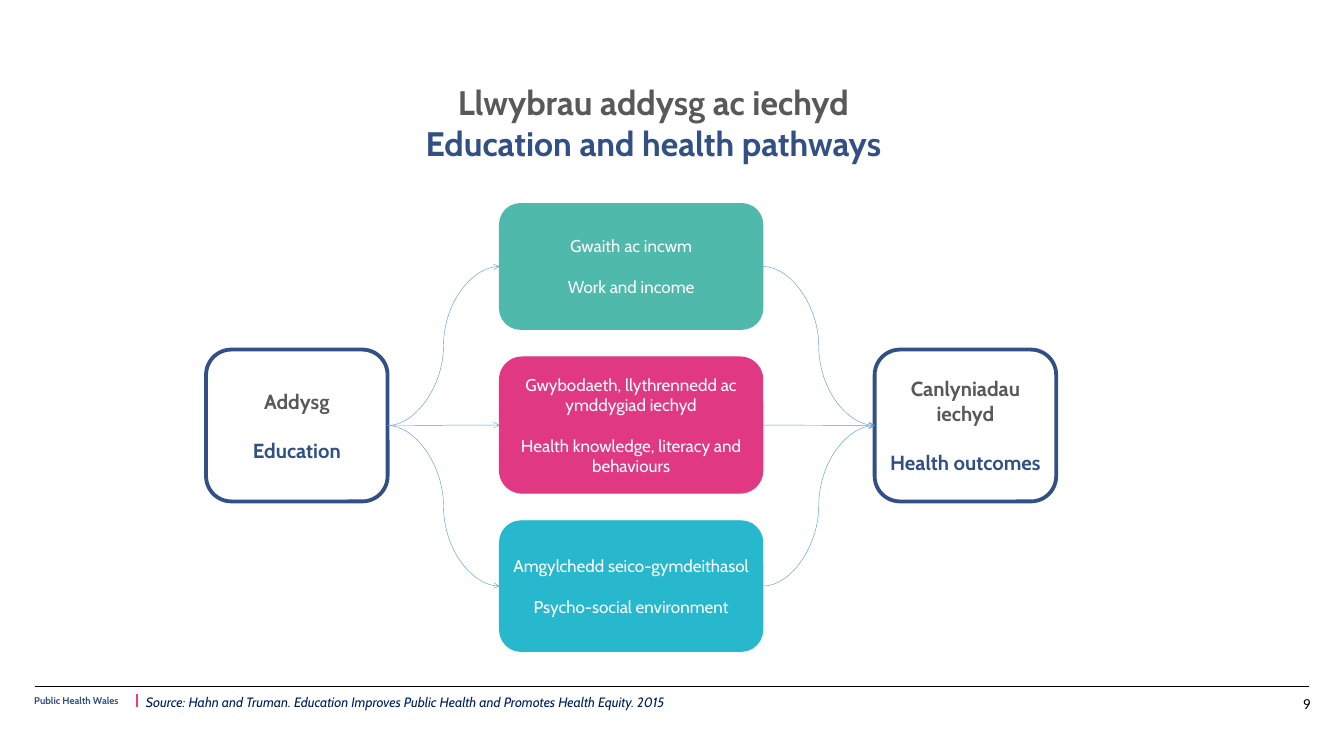
from dataclasses import dataclass
from typing import Optional

from lxml.etree import SubElement
from pptx import Presentation
from pptx.dml.color import RGBColor
from pptx.enum.shapes import MSO_CONNECTOR as Conn, MSO_SHAPE as Shp
from pptx.enum.text import MSO_ANCHOR as Anchor, MSO_AUTO_SIZE as Fit, PP_ALIGN as Align
from pptx.oxml.ns import qn
from pptx.util import Inches, Pt

GREY = RGBColor(0x59, 0x59, 0x59)
BLUE = RGBColor(0x32, 0x50, 0x83)
NAVY = RGBColor(0x00, 0x20, 0x60)
TEAL = RGBColor(0x4F, 0xB9, 0xAB)
PINK = RGBColor(0xE0, 0x38, 0x82)
CYAN = RGBColor(0x28, 0xB8, 0xCE)
TICK = RGBColor(0xF4, 0x38, 0x82)
ARROW = RGBColor(0x5B, 0x9B, 0xD5)
BLACK = RGBColor(0x00, 0x00, 0x00)
WHITE = RGBColor(0xFF, 0xFF, 0xFF)

W, H = Inches(21.99), Inches(12.37)

# Pathway grid, in percent of the slide's width and height
LEFT, END_W, FACTOR_W, COL_GAP = 15.33, 13.51, 19.6, 8.32
FACTOR_X = LEFT + END_W + COL_GAP
OUTCOME_X = FACTOR_X + FACTOR_W + COL_GAP
END_Y, END_H = 46.24, 20.09
FACTOR_Y, ROW_GAP = 26.92, 3.64


@dataclass(frozen=True)
class Style:
    size: float
    color: RGBColor
    bold: bool = False
    italic: bool = False
    font: str = "Cabin"


@dataclass(frozen=True)
class Box:
    welsh: str
    english: str
    x: float
    y: float
    w: float
    h: float
    fill: Optional[RGBColor] = None


@dataclass(frozen=True)
class Label:
    text: str
    x: float
    y: float
    w: float
    h: float
    style: Style
    inset: bool = False


@dataclass(frozen=True)
class Factor:
    welsh: str
    english: str
    h: float
    color: RGBColor


FACTORS = [
    Factor("Gwaith ac incwm", "Work and income", 16.65, TEAL),
    Factor("Gwybodaeth, llythrennedd ac ymddygiad iechyd",
           "Health knowledge, literacy and behaviours", 18.03, PINK),
    Factor("Amgylchedd seico-gymdeithasol", "Psycho-social environment", 17.3, CYAN),
]

LABELS = [
    Label("Source: Hahn and Truman. Education Improves Public Health and Promotes "
          "Health Equity. 2015", 10.41, 91.35, 44.93, 2.99,
          Style(16, NAVY, italic=True), inset=True),
    Label("Public Health Wales", 2.55, 91.84, 7.05, 1.7, Style(11.5, BLUE, bold=True)),
    Label("9", 96.95, 91.84, 0.75, 1.7, Style(18, BLACK, font="Calibri")),
]


def across(share: float) -> int:
    return round(W * share / 100)


def down(share: float) -> int:
    return round(H * share / 100)


def frame(x: float, y: float, w: float, h: float) -> tuple[int, int, int, int]:
    return across(x), down(y), across(w), down(h)


def add_run(p, text: str, style: Style) -> None:
    r = p.add_run()
    r.text = text
    f = r.font
    f.name, f.size, f.bold, f.italic = style.font, Pt(style.size), style.bold, style.italic
    f.color.rgb = style.color


def add_pair(tf, welsh: str, english: str, styles: tuple[Style, Style], gap: float) -> None:
    """Write the Welsh line, then the English one below it."""
    for i, (text, style) in enumerate(zip((welsh, english), styles)):
        p = tf.add_paragraph() if i else tf.paragraphs[0]
        p.alignment = Align.CENTER
        p.space_before = Pt(gap if i else 0)
        add_run(p, text, style)


def add_box(slide, box: Box):
    sp = slide.shapes.add_shape(Shp.ROUNDED_RECTANGLE, *frame(box.x, box.y, box.w, box.h))
    sp.shadow.inherit = False
    if box.fill is None:
        sp.fill.background()
        sp.line.color.rgb, sp.line.width = BLUE, Pt(4.5)
        styles = Style(24, GREY, bold=True), Style(24, BLUE, bold=True)
    else:
        sp.fill.solid()
        sp.fill.fore_color.rgb = box.fill
        sp.line.color.rgb, sp.line.width = box.fill, Pt(1)
        styles = Style(20, WHITE), Style(20, WHITE)
    tf = sp.text_frame
    tf.word_wrap, tf.vertical_anchor = True, Anchor.MIDDLE
    tf.margin_left = tf.margin_right = Inches(0.05)
    add_pair(tf, box.welsh, box.english, styles, 1.2 * styles[0].size)
    return sp


def add_line(slide, kind: Conn, ends: tuple[int, int, int, int], color: RGBColor, width: float):
    line = slide.shapes.add_connector(kind, *ends)
    line.line.color.rgb, line.line.width = color, Pt(width)
    SubElement(line._element.spPr, qn("a:effectLst"))
    return line


def add_link(slide, source, target, kind: Conn) -> None:
    """Draw an arrow from the source's right side to the target's left side."""
    link = add_line(slide, kind, (0, 0, 0, 0), ARROW, 0.5)
    link.begin_connect(source, 3)
    link.end_connect(target, 1)
    SubElement(link.line._get_or_add_ln(), qn("a:tailEnd"), type="arrow")


def add_label(slide, label: Label) -> None:
    tf = slide.shapes.add_textbox(*frame(label.x, label.y, label.w, label.h)).text_frame
    tf.word_wrap = True
    if not label.inset:
        tf.margin_left = tf.margin_right = tf.margin_top = tf.margin_bottom = 0
    add_run(tf.paragraphs[0], label.text, label.style)


def main() -> None:
    prs = Presentation()
    prs.slide_width, prs.slide_height = W, H
    s = prs.slides.add_slide(prs.slide_layouts[5])

    # Footer lines
    add_line(s, Conn.STRAIGHT, frame(2.59, 90.7, 97.36, 90.7), BLACK, 0.41)
    add_line(s, Conn.STRAIGHT, frame(10.19, 93.53, 10.19, 91.84), TICK, 1.65)

    # Title
    title = s.shapes.title
    title.left, title.top, title.width, title.height = frame(21.56, 10.43, 53.52, 11.72)
    tf = title.text_frame
    tf.word_wrap, tf.vertical_anchor, tf.auto_size = True, Anchor.TOP, Fit.NONE
    add_pair(tf, "Llwybrau addysg ac iechyd", "Education and health pathways",
             (Style(40, GREY, bold=True), Style(40, BLUE, bold=True)), 0)
    tf.paragraphs[0]._p.get_or_add_pPr().set("marL", str(Inches(0.13)))

    # Boxes
    education = add_box(s, Box("Addysg", "Education", LEFT, END_Y, END_W, END_H))
    factors, y = [], FACTOR_Y
    for f in FACTORS:
        factors.append(add_box(s, Box(f.welsh, f.english, FACTOR_X, y, FACTOR_W, f.h, f.color)))
        y += f.h + ROW_GAP
    outcomes = add_box(s, Box("Canlyniadau iechyd", "Health outcomes",
                              OUTCOME_X, END_Y, END_W, END_H))

    # Arrows
    for factor in factors:
        add_link(s, education, factor, Conn.CURVE)
    for factor, kind in zip(factors, (Conn.CURVE, Conn.STRAIGHT, Conn.CURVE)):
        add_link(s, factor, outcomes, kind)

    # Footer text
    for label in LABELS:
        add_label(s, label)

    prs.save("out.pptx")


if __name__ == "__main__":
    main()
